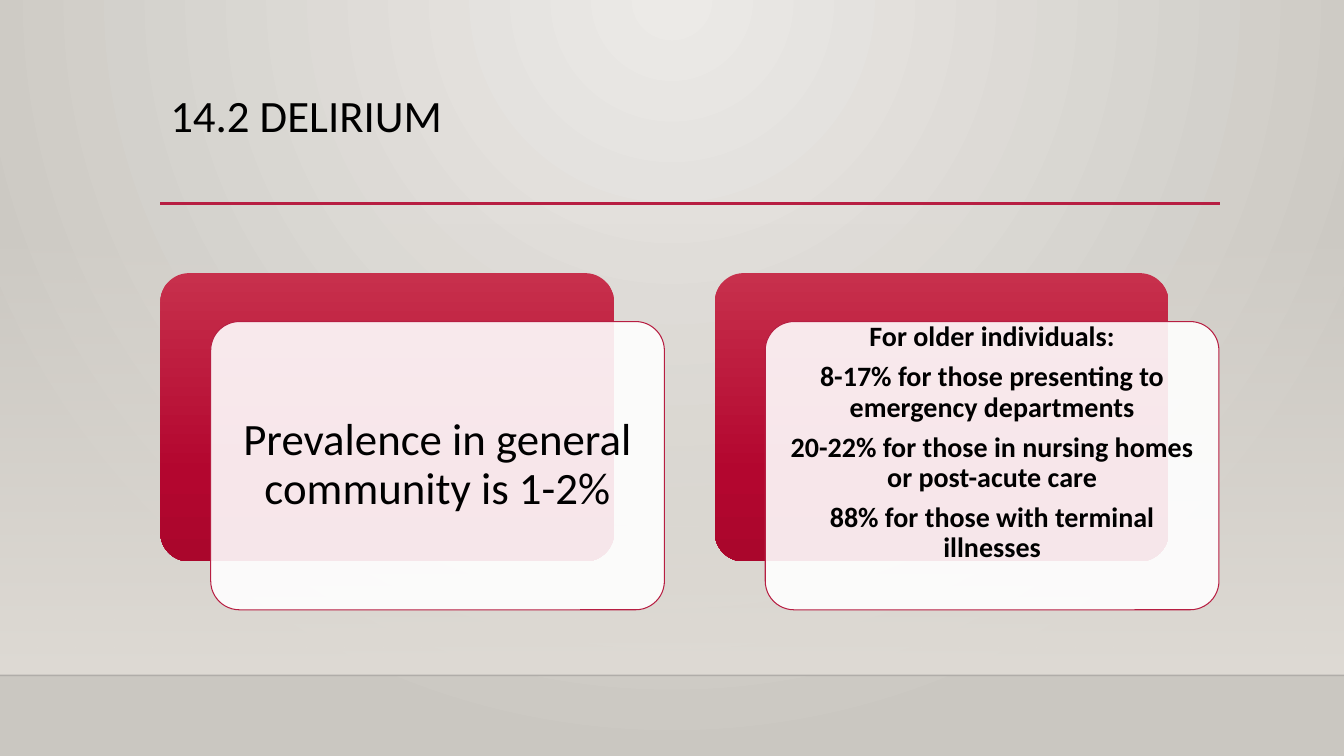
from lxml import etree
from pptx import Presentation, util as u
from pptx.dml.color import RGBColor
from pptx.enum import shapes, text
from pptx.oxml import parse_xml
from pptx.oxml.ns import nsdecls, qn

TITLE = "14.2 DELIRIUM"
CARDS = [
    dict(size=32, bold=False, inset=0.13, anchor="MIDDLE", lift=0,
         lines=["Prevalence in general community is 1-2%"]),
    dict(size=20, bold=True, inset=0.08, anchor="TOP", lift=0.15,
         lines=["For older individuals:",
                "8-17% for those presenting to emergency departments",
                "20-22% for those in nursing homes or post-acute care",
                "88% for those with terminal illnesses"]),
]
FONT, BLACK, WHITE, RED = "Calibri", "000000", "FFFFFF", "B71E42"
BACKDROP = [(0, "ECEAE7", 100), (100, "CAC7C1", 100)]
WALL = [(0, "DFDBD5", 0), (100, "DFDBD5", 100)]
CARD_BACK = [(0, "C7304C", 100), (69, "B3062F", 100), (100, "AA062C", 100)]
DOWN = '<a:lin ang="5400000" scaled="0"/>'
FROM_TOP = '<a:path path="circle"><a:fillToRect l="43000" r="43000" b="100000"/></a:path>'

WIDTH, HEIGHT = 13.33, 7.5
LEFT, RIGHT, RULE_Y, FLOOR_Y = 1.59, 12.1, 2.02, 6.7
CARD_W, CARD_H, CARD_TOP, CARD_STEP = 4.5, 2.86, 2.71, 5.5
SHIFT_X, SHIFT_Y, PAD = 0.5, 0.48, 0.08


def color(value):
    return RGBColor.from_string(value)


def inches(*lengths):
    return [u.Inches(n) for n in lengths]


def set_alpha(element, percent):
    """Make the first plain colour inside the element partly transparent."""
    clr = element.find(".//" + qn("a:srgbClr"))
    etree.SubElement(clr, qn("a:alpha")).set("val", str(percent * 1000))


def set_gradient(fill, element, stops, direction):
    fill.gradient()
    old = element.find(".//" + qn("a:gradFill"))
    marks = "".join(
        f'<a:gs pos="{pos * 1000}"><a:srgbClr val="{c}"><a:alpha val="{a * 1000}"/></a:srgbClr></a:gs>'
        for pos, c, a in stops)
    old.getparent().replace(old, parse_xml(
        f'<a:gradFill {nsdecls("a")} rotWithShape="1"><a:gsLst>{marks}</a:gsLst>{direction}</a:gradFill>'))


def add_shape(s, kind, *box):
    sp = s.shapes.add_shape(kind, *inches(*box))
    sp.shadow.inherit = False
    sp.line.fill.background()
    if kind == shapes.MSO_SHAPE.ROUNDED_RECTANGLE:
        sp.adjustments[0] = 0.1
    return sp


def add_rule(s, x1, x2, y, hue, width):
    line = s.shapes.add_connector(shapes.MSO_CONNECTOR.STRAIGHT, *inches(x1, y, x2, y))
    line.line.color.rgb = color(hue)
    line.line.width = u.Pt(width)
    etree.SubElement(line._element.spPr, qn("a:effectLst"))
    return line


def add_text(s, box, lines, size, bold=False, align="LEFT", anchor="TOP", insets=(0.1, 0.05)):
    tf = s.shapes.add_textbox(*inches(*box)).text_frame
    tf.word_wrap = True
    tf.vertical_anchor = text.MSO_ANCHOR[anchor]
    tf.margin_left = tf.margin_right = u.Inches(insets[0])
    tf.margin_top = tf.margin_bottom = u.Inches(insets[1])
    for i, words in enumerate(lines):
        p = tf.paragraphs[0] if i == 0 else tf.add_paragraph()
        p.alignment = text.PP_ALIGN[align]
        p.line_spacing = 0.9
        p.space_after = u.Pt(0.35 * size)
        r = p.add_run()
        r.text = words
        r.font.name, r.font.size, r.font.bold = FONT, u.Pt(size), bold
        r.font.color.rgb = color(BLACK)


def add_card(s, left, card):
    rounded = shapes.MSO_SHAPE.ROUNDED_RECTANGLE
    back = add_shape(s, rounded, left, CARD_TOP, CARD_W, CARD_H)
    set_gradient(back.fill, back._element.spPr, CARD_BACK, DOWN)
    x, y = left + SHIFT_X, CARD_TOP + SHIFT_Y
    front = add_shape(s, rounded, x, y, CARD_W, CARD_H)
    front.fill.solid()
    front.fill.fore_color.rgb = color(WHITE)
    set_alpha(front._element.spPr, 90)
    front.line.color.rgb = color(RED)
    front.line.width = u.Pt(0.75)
    box = (x + PAD, y + PAD - card["lift"], CARD_W - 2 * PAD, CARD_H - 2 * PAD)
    add_text(s, box, card["lines"], card["size"], card["bold"], "CENTER",
             card["anchor"], (card["inset"], card["inset"]))


def main():
    prs = Presentation()
    prs.slide_width, prs.slide_height = inches(WIDTH, HEIGHT)
    s = prs.slides.add_slide(prs.slide_layouts[6])
    set_gradient(s.background.fill, s._element, BACKDROP, FROM_TOP)

    wall = add_shape(s, shapes.MSO_SHAPE.RECTANGLE, 0, 2.21, WIDTH, FLOOR_Y - 2.21)
    set_gradient(wall.fill, wall._element.spPr, WALL, DOWN)
    floor = add_rule(s, 0, WIDTH, FLOOR_Y, "000001", 1)
    set_alpha(floor._element.spPr, 20)
    add_rule(s, LEFT, RIGHT, RULE_Y, RED, 2.5)

    add_text(s, (LEFT, 0.88, RIGHT - LEFT, 1.15), [TITLE], 32)
    for i, card in enumerate(CARDS):
        add_card(s, LEFT + i * CARD_STEP, card)
    prs.save("out.pptx")


if __name__ == "__main__":
    main()
